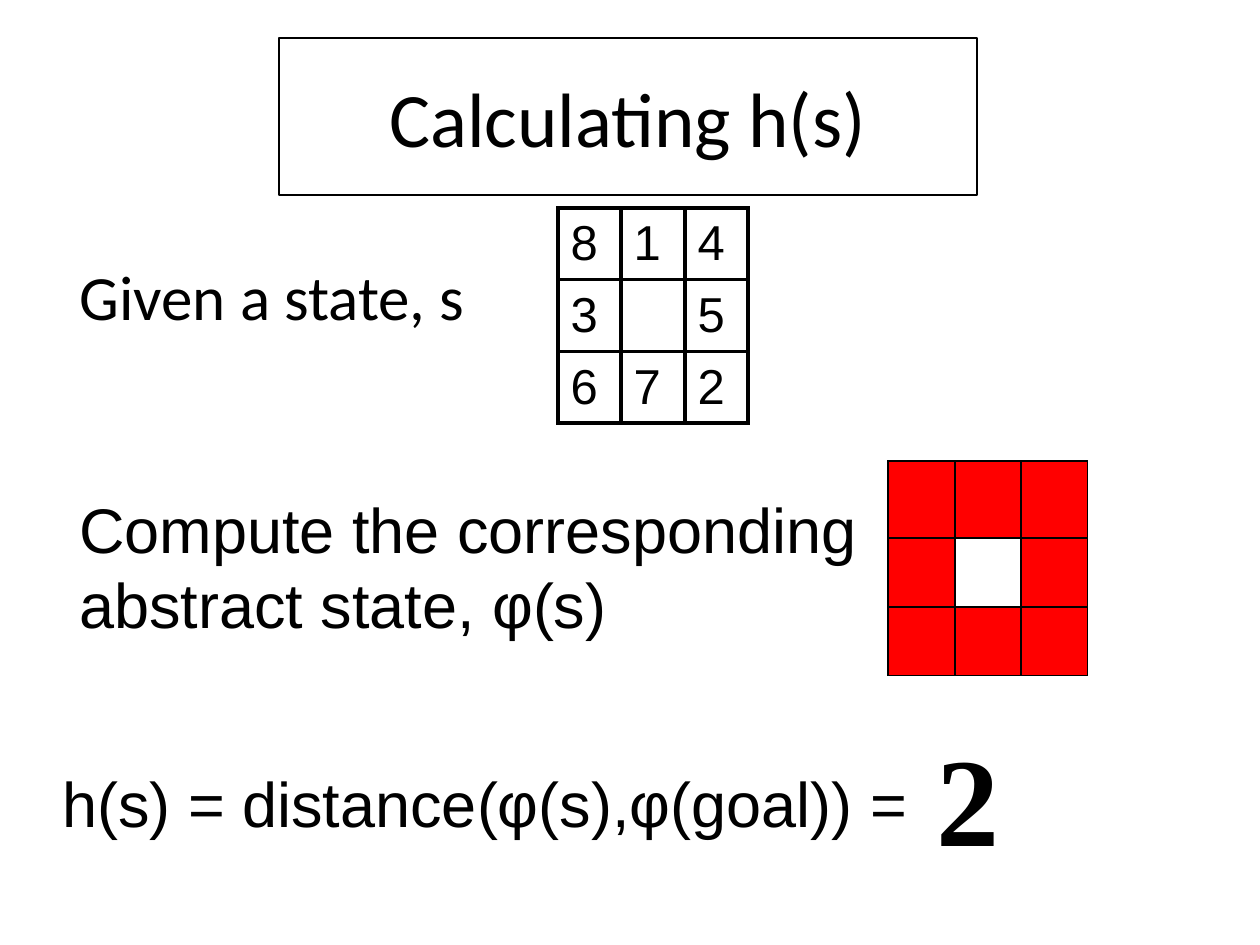
from lxml.etree import SubElement
from pptx import Presentation
from pptx.dml.color import RGBColor
from pptx.enum.shapes import MSO_SHAPE as Shape
from pptx.enum.text import MSO_ANCHOR as Anchor, PP_ALIGN as Align
from pptx.oxml.ns import qn
from pptx.util import Pt

EMU_PER_PX = 914400 / 126
BLACK, WHITE, RED = "000000", "FFFFFF", "FF0000"
STATE = ["814", "3 5", "672"]
ABSTRACT_STATE = [[RED, RED, RED], [RED, WHITE, RED], [RED, RED, RED]]


def px(length):
    return round(length * EMU_PER_PX)


def color(value):
    return RGBColor.from_string(value)


def write(frame, text, font="Arial", size=36, bold=False, align=Align.LEFT,
          anchor=Anchor.TOP, wrap=False, spacing=None, before=0):
    frame.word_wrap = wrap
    frame.vertical_anchor = anchor
    for index, line in enumerate(text.split("\n")):
        paragraph = frame.add_paragraph() if index else frame.paragraphs[0]
        paragraph.alignment = align
        paragraph.space_before = Pt(before)
        if spacing:
            paragraph.line_spacing = spacing
        run = paragraph.add_run()
        run.text = line
        run.font.name = font
        run.font.size = Pt(size)
        run.font.bold = bold
        run.font.color.rgb = color(BLACK)


def add_text(slide, box, text, **style):
    label = slide.shapes.add_textbox(*map(px, box))
    write(label.text_frame, text, **style)


def add_title(slide, box, text):
    title = slide.shapes.add_shape(Shape.RECTANGLE, *map(px, box))
    title.shadow.inherit = False
    title.fill.background()
    title.line.color.rgb = color(BLACK)
    title.line.width = Pt(0.75)
    write(title.text_frame, text, font="Calibri", size=44,
          align=Align.CENTER, anchor=Anchor.MIDDLE, wrap=True)


def set_borders(cell, width):
    properties = cell._tc.get_or_add_tcPr()
    for side in ("lnL", "lnR", "lnT", "lnB"):
        line = SubElement(properties, qn(f"a:{side}"), w=str(Pt(width)))
        fill = SubElement(line, qn("a:solidFill"))
        SubElement(fill, qn("a:srgbClr"), val=BLACK)


def add_grid(slide, left, top, widths, heights, border):
    box = (left, top, sum(widths), sum(heights))
    grid = slide.shapes.add_table(len(heights), len(widths), *map(px, box)).table
    grid.first_row = False
    grid.horz_banding = False
    for column, width in zip(grid.columns, widths):
        column.width = px(width)
    for row, height in zip(grid.rows, heights):
        row.height = px(height)
    for cell in grid.iter_cells():
        set_borders(cell, border)
    return grid


def add_state(slide):
    puzzle = add_grid(slide, 558, 208, [63, 64, 63], [71, 72, 71], 2.25)
    for cell, tile in zip(puzzle.iter_cells(), "".join(STATE)):
        cell.fill.solid()
        cell.fill.fore_color.rgb = color(WHITE)
        cell.vertical_anchor = Anchor.MIDDLE
        if tile.strip():
            write(cell.text_frame, tile, size=28, anchor=None, wrap=None)


def add_abstract_state(slide):
    pattern = add_grid(slide, 888, 461, [67, 66, 67], [77, 69, 69], 0.75)
    for cell, shade in zip(pattern.iter_cells(), sum(ABSTRACT_STATE, [])):
        cell.fill.solid()
        cell.fill.fore_color.rgb = color(shade)


def main():
    deck = Presentation()
    deck.slide_width, deck.slide_height = px(1260), px(945)
    slide = deck.slides.add_slide(deck.slide_layouts[6])
    add_title(slide, (279, 38, 698, 157), "Calculating h(s)")
    add_text(slide, (67, 266, 470, 76), "Given a state, s",
             font="Calibri", wrap=True, spacing=0.8, before=7.2)
    add_state(slide)
    add_abstract_state(slide)
    add_text(slide, (924, 714, 88, 164), "2",
             font="Times New Roman", size=72, bold=True)
    add_text(slide, (67, 484, 803, 164),
             "Compute the corresponding\nabstract state, φ(s)")
    add_text(slide, (50, 767, 871, 81), "h(s) = distance(φ(s),φ(goal)) =",
             spacing=0.9, before=7.2)
    deck.save("out.pptx")


if __name__ == "__main__":
    main()
